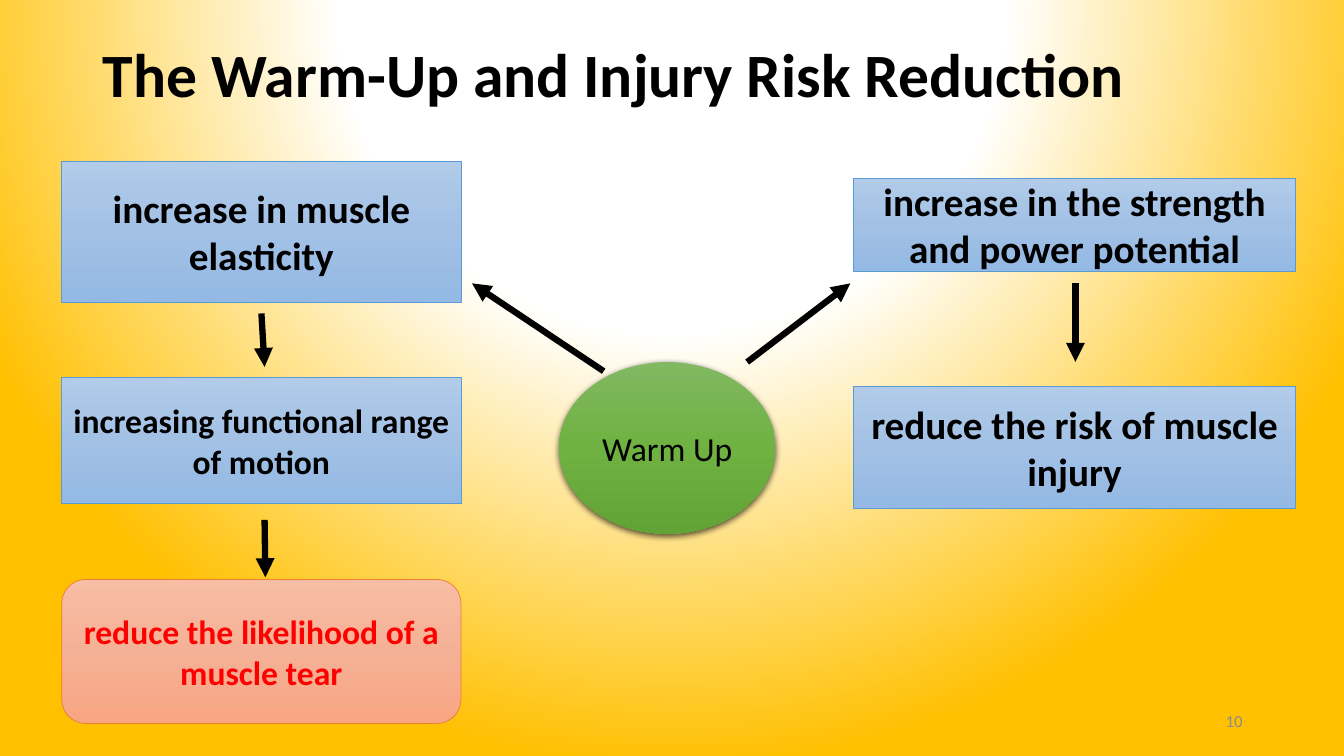
from dataclasses import dataclass

from lxml import etree
from pptx import Presentation
from pptx.dml.color import RGBColor
from pptx.enum.shapes import MSO_CONNECTOR, MSO_SHAPE
from pptx.enum.text import MSO_ANCHOR, MSO_AUTO_SIZE, PP_ALIGN
from pptx.oxml import parse_xml
from pptx.oxml.ns import nsdecls, qn
from pptx.util import Inches, Pt

COLORS = {"black": "000000", "red": "FF0000", "grey": "8C8C8C",
          "blue_line": "5B9BD5", "orange_line": "ED7D31"}
GRADIENTS = {
    "sun": [(0, "FFFFFF"), (43, "FFFFFF"), (100, "FFC000")],
    "blue": [(0, "B1CBE9"), (50, "A3C1E5"), (100, "93B9E4")],
    "orange": [(0, "F7BDA5"), (50, "F5B196"), (100, "F8A582")],
    "green": [(0, "81B861"), (50, "6FB242"), (100, "62A336")],
}
DOWNWARD = f'<a:lin {nsdecls("a")} ang="5400000" scaled="0"/>'
RADIAL = (f'<a:path {nsdecls("a")} path="circle">'
          '<a:fillToRect l="50000" t="-80000" r="50000" b="180000"/></a:path>')
HUB_SHADOW = (f'<a:effectLst {nsdecls("a")}>'
              '<a:outerShdw blurRad="57150" dist="19050" dir="5400000" algn="ctr" rotWithShape="0">'
              '<a:srgbClr val="000000"><a:alpha val="63000"/></a:srgbClr>'
              '</a:outerShdw></a:effectLst>')


@dataclass
class Box:
    left: int
    top: int
    width: int
    height: int

    def point(self, x, y):
        """Position given in percent of this box."""
        return int(self.left + self.width * x / 100), int(self.top + self.height * y / 100)

    def inner(self, x, y, w, h):
        """Inner box given in percent of this box."""
        return Box(*self.point(x, y), int(self.width * w / 100), int(self.height * h / 100))

    @property
    def frame(self):
        return self.left, self.top, self.width, self.height


def rgb(name):
    return RGBColor.from_string(COLORS[name])


def set_gradient(fill, owner, name, direction):
    fill.gradient()
    grad = owner.find(".//" + qn("a:gradFill"))
    for child in list(grad):
        grad.remove(child)
    stops = etree.SubElement(grad, qn("a:gsLst"))
    for pos, color in GRADIENTS[name]:
        stop = etree.SubElement(stops, qn("a:gs"), pos=str(pos * 1000))
        etree.SubElement(stop, qn("a:srgbClr"), val=color)
    grad.append(parse_xml(direction))


def write(tf, text, size, color, bold=False, align=PP_ALIGN.CENTER):
    tf.word_wrap = True
    tf.auto_size = MSO_AUTO_SIZE.NONE
    tf.vertical_anchor = MSO_ANCHOR.MIDDLE
    tf.text = text
    for p in tf.paragraphs:
        p.alignment = align
        p.font.name, p.font.size, p.font.bold = "Calibri", Pt(size), bold
        p.font.color.rgb = rgb(color)


def add_node(slide, box, kind, gradient, line=None):
    s = slide.shapes.add_shape(kind, *box.frame)
    s.shadow.inherit = False
    set_gradient(s.fill, s._element.spPr, gradient, DOWNWARD)
    if line:
        s.line.color.rgb = rgb(line)
        s.line.width = Pt(0.5)
    else:
        s.line.fill.background()
    return s


def add_arrow(slide, box, start, end):
    arrow = slide.shapes.add_connector(MSO_CONNECTOR.STRAIGHT, *box.point(*start), *box.point(*end))
    arrow.line.color.rgb = rgb("black")
    arrow.line.width = Pt(4.5)
    sp_pr = arrow._element.spPr
    etree.SubElement(sp_pr.find(qn("a:ln")), qn("a:tailEnd"), type="triangle")
    etree.SubElement(sp_pr, qn("a:effectLst"))


def add_title(slide, box, text):
    title = slide.shapes.title
    title.left, title.top, title.width, title.height = box.frame
    write(title.text_frame, text, 44, "black", True, PP_ALIGN.LEFT)
    title.text_frame.paragraphs[0].line_spacing = 0.9


def add_effect_column(slide, box, steps, arrows):
    """Stack effects given as (top, height, text, size, is_outcome)."""
    for top, height, text, size, is_outcome in steps:
        look = ((MSO_SHAPE.ROUNDED_RECTANGLE, "orange", "orange_line") if is_outcome
                else (MSO_SHAPE.RECTANGLE, "blue", "blue_line"))
        s = add_node(slide, box.inner(0, top, 100, height), *look)
        write(s.text_frame, text, size, "red" if is_outcome else "black", True)
    for start, end in arrows:
        add_arrow(slide, box, start, end)


def add_hub(slide, box, text):
    s = add_node(slide, box, MSO_SHAPE.OVAL, "green")
    sp_pr = s._element.spPr
    sp_pr.replace(sp_pr.find(qn("a:effectLst")), parse_xml(HUB_SHADOW))
    write(s.text_frame, text, 24, "black")
    add_arrow(slide, box, (20.6, 5.3), (-40.2, -45.9))
    add_arrow(slide, box, (86.9, 0), (134.6, -45.9))


def add_page_number(slide, box, number):
    s = slide.shapes.add_textbox(*box.frame)
    write(s.text_frame, number, 12, "grey", align=PP_ALIGN.RIGHT)


def main():
    prs = Presentation()
    prs.slide_width, prs.slide_height = Inches(13.33), Inches(7.5)
    page = Box(0, 0, prs.slide_width, prs.slide_height)
    slide = prs.slides.add_slide(prs.slide_layouts[5])
    set_gradient(slide.background.fill, slide._element, "sun", RADIAL)

    add_title(slide, page.inner(6.9, 4.1, 86.3, 12.4), "The Warm-Up and Injury Risk Reduction")
    add_effect_column(
        slide, page.inner(4.6, 21.3, 29.7, 74.4),
        [(0, 25.1, "increase in muscle elasticity", 28, False),
         (38.5, 22.4, "increasing functional range\nof motion", 24, False),
         (74.4, 25.6, "reduce the likelihood of a\nmuscle tear", 24, True)],
        [((50, 27.1), (50.8, 36.6)), ((50.8, 63.8), (51, 74))])
    add_hub(slide, page.inner(41.6, 47.9, 16.1, 22.7), "Warm Up")
    add_effect_column(
        slide, page.inner(63.5, 23.6, 32.9, 43.7),
        [(0, 28, "increase in the strength and power potential", 28, False),
         (62.8, 37.2, "reduce the risk of muscle injury", 28, False)],
        [((50.2, 31.7), (50.2, 55.5))])
    add_page_number(slide, page.inner(70.7, 92.7, 22.5, 5.3), "10")
    prs.save("out.pptx")


if __name__ == "__main__":
    main()
